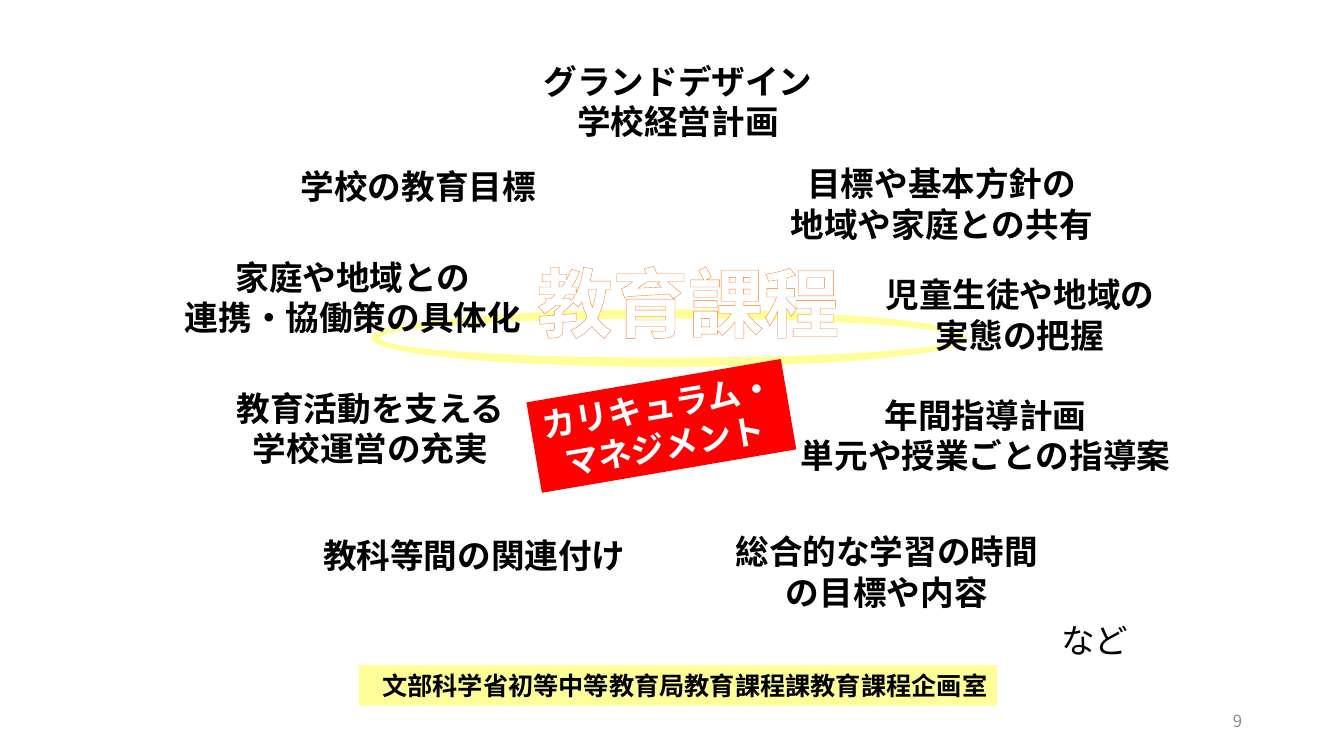
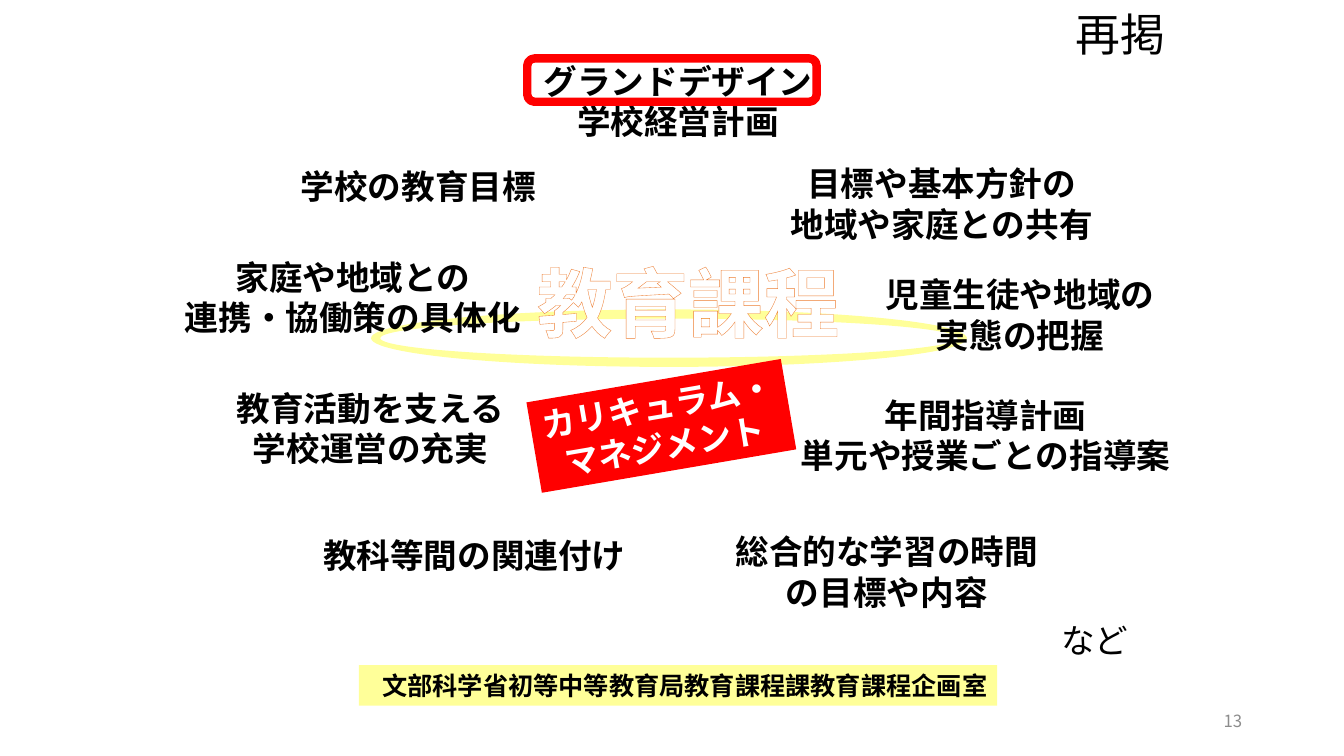
"""Build two slides that map the elements of curriculum management."""
from lxml.etree import SubElement
from pptx import Presentation
from pptx.dml.color import RGBColor
from pptx.enum.shapes import MSO_SHAPE as Shape
from pptx.enum.text import MSO_ANCHOR as Anchor, MSO_AUTO_SIZE as AutoSize, PP_ALIGN as Align
from pptx.oxml import parse_xml
from pptx.oxml.ns import nsdecls, qn
from pptx.util import Inches, Pt

FONT = "Noto Sans CJK JP"
BLACK = RGBColor(0x00, 0x00, 0x00)
WHITE = RGBColor(0xFF, 0xFF, 0xFF)
RED = RGBColor(0xFF, 0x00, 0x00)
YELLOW = RGBColor(0xFF, 0xFF, 0x99)
ORANGE = RGBColor(0xED, 0x7D, 0x31)
GRAY = RGBColor(0x8C, 0x8C, 0x8C)

ONE_LINE, TWO_LINES = 0.51, 0.91
ELEMENTS = [
    ("グランドデザイン\n学校経営計画", 5.16, 0.55, 3.13, TWO_LINES),
    ("目標や基本方針の\n地域や家庭との共有", 7.74, 1.57, 3.2, TWO_LINES),
    ("児童生徒や地域の\n実態の把握", 8.64, 2.67, 2.95, TWO_LINES),
    ("年間指導計画\n単元や授業ごとの指導案", 7.81, 3.87, 3.93, TWO_LINES),
    ("総合的な学習の時間の目標や内容", 7.1, 5.22, 3.39, TWO_LINES),
    ("教科等間の関連付け", 3.09, 5.26, 3.23, ONE_LINE),
    ("教育活動を支える学校運営の充実", 2.2, 3.8, 2.95, TWO_LINES),
    ("家庭や地域との\n連携・協働策の具体化", 1.66, 2.5, 3.68, TWO_LINES),
    ("学校の教育目標", 1.65, 1.6, 5, ONE_LINE),
]
CORE = "教育課程"
BADGE = "カリキュラム・\nマネジメント"
SOURCE = "文部科学省初等中等教育局教育課程課教育課程企画室"
SLIDES = [{"number": "9"}, {"number": "13", "repeat_mark": "再掲"}]


def write(box, text, size=24, bold=True, color=BLACK, align=Align.CENTER,
          wrap=True, grow=True, anchor=Anchor.TOP, outline=None):
    frame = box.text_frame
    frame.text = text
    frame.word_wrap = wrap
    frame.vertical_anchor = anchor
    frame.auto_size = AutoSize.SHAPE_TO_FIT_TEXT if grow else AutoSize.NONE
    for paragraph in frame.paragraphs:
        paragraph.alignment = align
        for run in paragraph.runs:
            run.font.size, run.font.bold, run.font.name = Pt(size), bold, FONT
            run.font.color.rgb = color
            props = run.font._element
            SubElement(props, qn("a:ea")).set("typeface", FONT)
            if outline:
                props.insert(0, parse_xml(
                    f'<a:ln {nsdecls("a")} w="{Pt(0.52)}"><a:solidFill>'
                    f'<a:srgbClr val="{outline}"/></a:solidFill></a:ln>'))


def add_label(slide, text, left, top, width, height, **style):
    box = slide.shapes.add_textbox(*map(Inches, (left, top, width, height)))
    write(box, text, **style)


def add_figure(slide, kind, left, top, width, height, fill=None, line=None):
    figure = slide.shapes.add_shape(kind, *map(Inches, (left, top, width, height)))
    figure.shadow.inherit = False
    if fill is None:
        figure.fill.background()
    else:
        figure.fill.solid()
        figure.fill.fore_color.rgb = fill
    if line is None:
        figure.line.fill.background()
    else:
        figure.line.color.rgb = line
        figure.line.width = Pt(6)
    return figure


def add_map(slide, number):
    ring = add_figure(slide, Shape.DONUT, 3.68, 3.07, 5.91, 0.57, YELLOW)
    ring.adjustments[0] = 0.16
    source = add_figure(slide, Shape.RECTANGLE, 3.56, 6.6, 6.33, 0.4, YELLOW)
    write(source, SOURCE, size=18, align=Align.RIGHT)
    add_label(slide, "など", 10.32, 6.1, 1.08, ONE_LINE, bold=False)
    for text, *place in ELEMENTS:
        add_label(slide, text, *place)
    add_label(slide, CORE, 5.2, 2.49, 3.25, 1.01, size=54, color=WHITE,
              wrap=False, outline=ORANGE)
    badge = add_figure(slide, Shape.RECTANGLE, 5.28, 3.77, 2.56, TWO_LINES, RED)
    badge.rotation = 350.3
    write(badge, BADGE, color=WHITE, wrap=False)
    add_label(slide, number, 9.42, 6.95, 3, 0.4, size=12, bold=False, color=GRAY,
              align=Align.RIGHT, grow=False, anchor=Anchor.MIDDLE)


def add_repeat_mark(slide, text):
    add_label(slide, text, 10.57, 0.02, 1.1, 0.64, size=32, bold=False, align=Align.LEFT)
    add_figure(slide, Shape.ROUNDED_RECTANGLE, 5.23, 0.58, 2.87, 0.43, line=RED)


def main():
    deck = Presentation()
    deck.slide_width, deck.slide_height = Inches(13.33), Inches(7.5)
    for content in SLIDES:
        slide = deck.slides.add_slide(deck.slide_layouts[6])
        add_map(slide, content["number"])
        if "repeat_mark" in content:
            add_repeat_mark(slide, content["repeat_mark"])
    deck.save("out.pptx")


if __name__ == "__main__":
    main()
